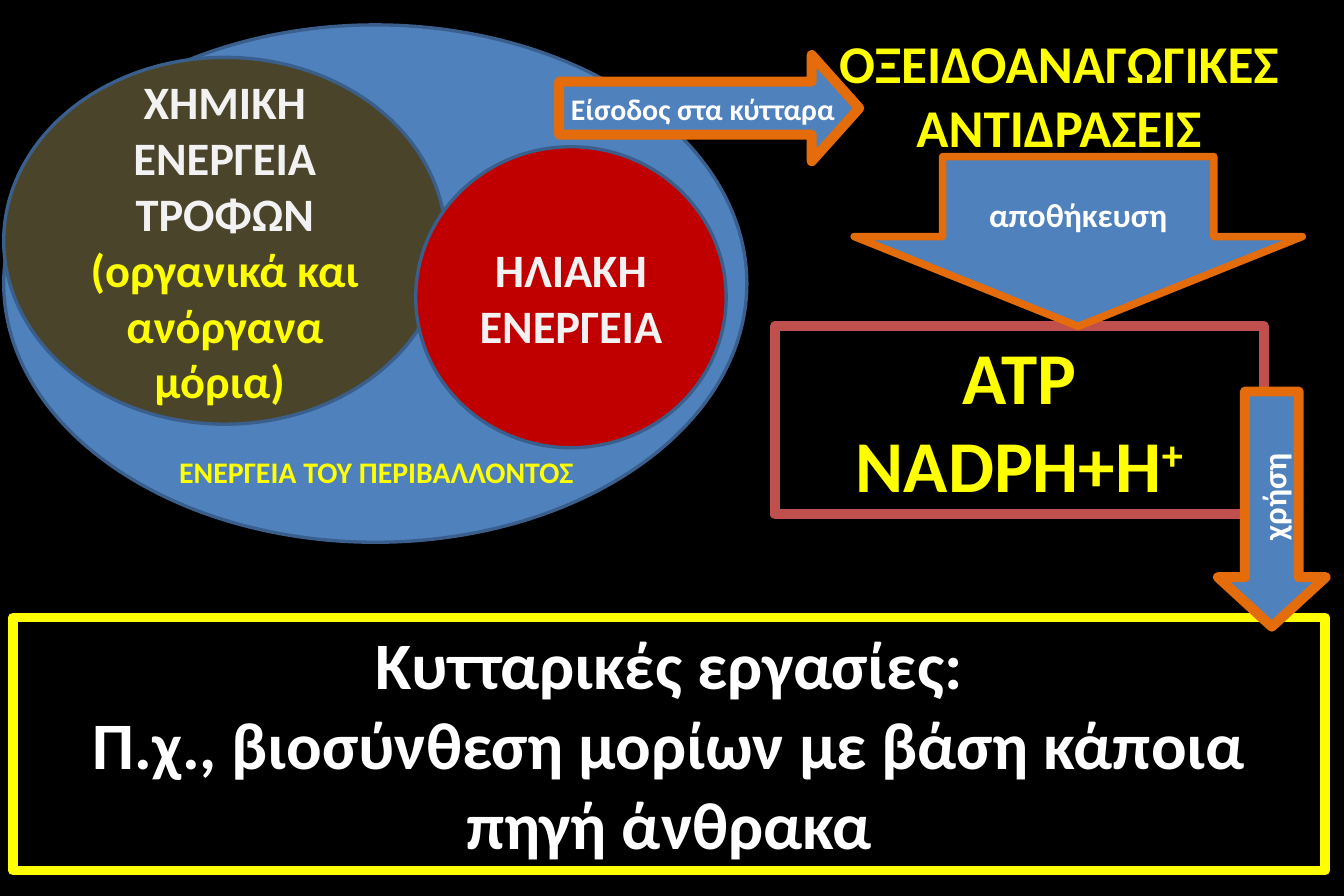
from dataclasses import dataclass

from pptx import Presentation
from pptx.dml.color import RGBColor
from pptx.enum.shapes import MSO_SHAPE as Preset
from pptx.enum.text import MSO_ANCHOR as Anchor, MSO_AUTO_SIZE as AutoSize, PP_ALIGN as Align
from pptx.oxml.ns import qn
from pptx.util import Cm, Pt


@dataclass(frozen=True)
class Theme:
    font: str = "Calibri"
    black: str = "000000"
    white: str = "FFFFFF"
    pale: str = "F2F2F2"
    yellow: str = "FFFF00"
    blue: str = "4F81BD"
    navy: str = "3A5F8C"
    olive: str = "4A452A"
    red: str = "C00000"
    rose: str = "C0504D"
    orange: str = "E46C0A"
    label: int = 18
    step: int = 20
    source: int = 28
    heading: int = 32
    work: int = 40
    carrier: int = 44
    thin: float = 2
    medium: float = 4.5
    thick: float = 6


theme = Theme()

SOURCE = dict(size=theme.source, color=theme.pale)
STEP = dict(size=theme.step, color=theme.white, wrap=False)
LABEL = dict(size=theme.label, wrap=False)
BOX = dict(anchor=Anchor.TOP, grow=True)

PARTS = [
    dict(preset=Preset.OVAL, at=(0.08, 0.53, 15.8, 11), fill=theme.blue,
         line=(theme.navy, theme.thin)),
    dict(preset=Preset.RECTANGLE, at=(16.48, 6.93, 10.39, 4.01), line=(theme.rose, theme.thick),
         text=[["ATP"], ["NADΡH+Η", ("+", dict(baseline=30000))]],
         style=dict(BOX, size=theme.carrier, color=theme.yellow)),
    dict(preset=Preset.RIGHT_ARROW, at=(11.89, 1.17, 6.38, 2.26), adjust=(0.5, 0.447),
         fill=theme.blue, line=(theme.orange, theme.thick),
         text=[["Είσοδος στα κύτταρα"]],
         style=dict(LABEL, color=theme.white, align=Align.LEFT)),
    dict(preset=Preset.RECTANGLE, at=(0.28, 13.13, 27.89, 5.38), line=(theme.yellow, theme.thick),
         text=[["Κυτταρικές εργασίες:"],
               ["Π.χ., βιοσύνθεση μορίων με βάση κάποια πηγή άνθρακα"]],
         style=dict(BOX, size=theme.work, color=theme.white)),
    dict(preset=Preset.DOWN_ARROW, at=(18.16, 3.33, 9.53, 3.61), adjust=(0.605, 0.529),
         fill=theme.blue, line=(theme.orange, theme.medium),
         text=[["αποθήκευση"]], style=STEP),
    dict(at=(16.74, 0.53, 11.56, 2.97), text=[["ΟΞΕΙΔΟΑΝΑΓΩΓΙΚΕΣ ΑΝΤΙΔΡΑΣΕΙΣ"]],
         style=dict(BOX, size=theme.heading, color=theme.yellow)),
    dict(preset=Preset.RIGHT_ARROW, at=(24.54, 9.68, 5, 2.29), adjust=(0.5, 0.459), rotation=90,
         fill=theme.blue, line=(theme.orange, theme.thick),
         text=[["χρήση"]], style=dict(STEP, anchor=Anchor.BOTTOM, turn=180)),
    dict(preset=Preset.OVAL, at=(0.08, 1.22, 9.4, 7.8), fill=theme.olive,
         line=(theme.navy, theme.thin),
         text=[["ΧΗΜΙΚΗ ΕΝΕΡΓΕΙΑ ΤΡΟΦΩΝ ",
                ("(οργανικά και ανόργανα μόρια) ", dict(color=theme.yellow))]],
         style=SOURCE),
    dict(preset=Preset.OVAL, at=(8.84, 3.12, 6.6, 6.4), fill=theme.red,
         line=(theme.navy, theme.thin), text=[["ΗΛΙΑΚΗ ΕΝΕΡΓΕΙΑ"]], style=SOURCE),
    dict(at=(3.51, 9.53, 8.99, 1.02), text=[["ΕΝΕΡΓΕΙΑ ΤΟΥ ΠΕΡΙΒΑΛΛΟΝΤΟΣ"]],
         style=dict(LABEL, **BOX, color=theme.yellow)),
]


def add_text(shape, paragraphs, *, size, color, align=Align.CENTER, anchor=Anchor.MIDDLE,
             wrap=True, grow=False, turn=0):
    frame = shape.text_frame
    frame.word_wrap = wrap
    frame.vertical_anchor = anchor
    frame.auto_size = AutoSize.SHAPE_TO_FIT_TEXT if grow else AutoSize.NONE
    if turn:
        body = shape.element.txBody.find(qn("a:bodyPr"))
        body.set("rot", str(turn * 60000))
    for index, pieces in enumerate(paragraphs):
        paragraph = frame.add_paragraph() if index else frame.paragraphs[0]
        paragraph.alignment = align
        for piece in pieces:
            words, change = (piece, {}) if isinstance(piece, str) else piece
            run = paragraph.add_run()
            run.text = words
            run.font.name = theme.font
            run.font.size = Pt(size)
            run.font.bold = True
            run.font.color.rgb = RGBColor.from_string(change.get("color", color))
            if "baseline" in change:
                run._r.get_or_add_rPr().set("baseline", str(change["baseline"]))


def add_part(slide, at, preset=None, fill=None, line=None, adjust=(), rotation=0,
             text=None, style=None):
    place = [Cm(length) for length in at]
    if preset is None:
        shape = slide.shapes.add_textbox(*place)
    else:
        shape = slide.shapes.add_shape(preset, *place)
        shape.shadow.inherit = False
        shape.rotation = rotation
        for index, value in enumerate(adjust):
            shape.adjustments[index] = value
        if fill:
            shape.fill.solid()
            shape.fill.fore_color.rgb = RGBColor.from_string(fill)
        else:
            shape.fill.background()
        line_color, line_width = line
        shape.line.color.rgb = RGBColor.from_string(line_color)
        shape.line.width = Pt(line_width)
    if text:
        add_text(shape, text, **style)


def main():
    presentation = Presentation()
    presentation.slide_height = Cm(19.05)
    presentation.slide_width = presentation.slide_height * 3 // 2
    slide = presentation.slides.add_slide(presentation.slide_layouts[6])
    slide.background.fill.solid()
    slide.background.fill.fore_color.rgb = RGBColor.from_string(theme.black)
    for part in PARTS:
        add_part(slide, **part)
    presentation.save("out.pptx")


if __name__ == "__main__":
    main()
